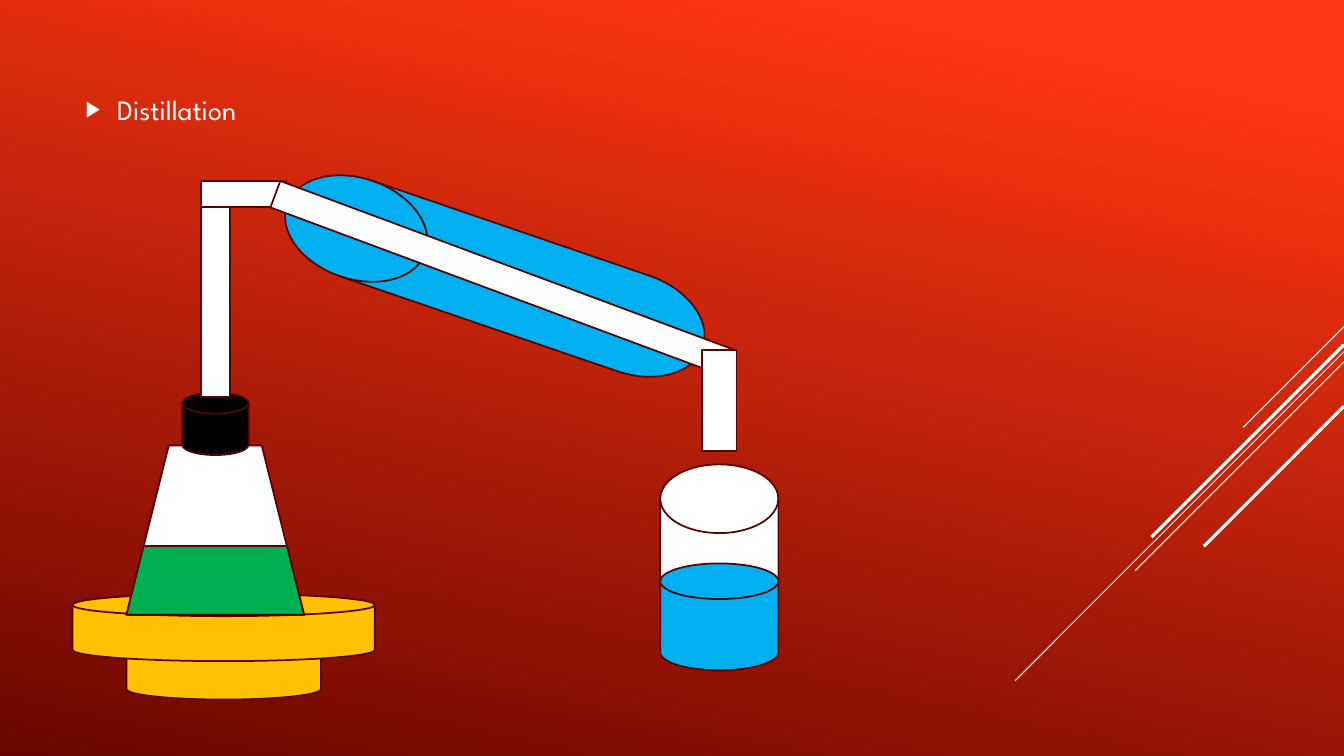
from lxml.etree import SubElement
from pptx import Presentation
from pptx.dml.color import RGBColor
from pptx.enum.shapes import MSO_CONNECTOR, MSO_SHAPE as SHAPE
from pptx.enum.text import MSO_ANCHOR, MSO_AUTO_SIZE
from pptx.oxml.ns import qn
from pptx.util import Pt

WIDTH, HEIGHT = 960, 540
OUTLINE, WHITE, BLACK = "570402", "FFFFFF", "000000"
WATER, LIQUID, BRASS = "00B0F0", "00B050", "FFC000"
DISK, DRUM = SHAPE.FLOWCHART_MAGNETIC_DISK, SHAPE.FLOWCHART_DIRECT_ACCESS_STORAGE

STREAKS = [
    (233.3, 72, 0.75),
    (251.3, 234.7, 0.75),
    (258.5, 149.2, 0.75),
    (246.2, 137.5, 2.25),
    (290.2, 100.1, 2.25),
]

APPARATUS = {
    "condenser": (DISK, (317.5, 40.2, 72, 313.9), WATER, 288.9),
    "burner base": (DISK, (90.3, 454.7, 139, 45), BRASS, 0),
    "burner plate": (DISK, (51.8, 424.1, 216, 48.2), BRASS, 0),
    "flask": (SHAPE.TRAPEZOID, (90.3, 318.2, 126.9, 121), WHITE, 0),
    "flask liquid": (SHAPE.TRAPEZOID, (90.3, 390, 126.9, 49.2), LIQUID, 0),
    "stopper": (DRUM, (131.6, 279, 44.6, 47.5), BLACK, 270),
    "riser": (SHAPE.RECTANGLE, (143.6, 132.5, 20.8, 151.2), WHITE, 0),
    "elbow": (SHAPE.RECTANGLE, (143.6, 129.4, 61, 18.4), WHITE, 0),
    "inner tube": (SHAPE.RECTANGLE, (185.8, 189.1, 347, 20.2), WHITE, 20.4),
    "spout": (SHAPE.RECTANGLE, (477.8, 273.8, 72, 24.5), WHITE, 90),
    "beaker": (DISK, (471.6, 331.7, 84.4, 147.3), WHITE, 0),
    "distillate": (DISK, (471.6, 402.5, 84.4, 76.3), WATER, 0),
}


def color(value):
    """Return the colour for a hex string."""
    return RGBColor.from_string(value)


def set_format(target, values):
    """Set every attribute named in a dict."""
    for name, value in values.items():
        setattr(target, name, value)


def paint_background(slide):
    """Fill the background with the red gradient."""
    fill = slide.background.fill
    fill.gradient()
    fill.gradient_angle = 258
    for stop, (position, value) in zip(fill.gradient_stops, [(0.1, "FF3712"), (1, "6A0600")]):
        stop.position = position
        stop.color.rgb = color(value)


def add_streak(slide, top, length, weight):
    """Draw a diagonal line down and left from the right edge."""
    streak = slide.shapes.add_connector(
        MSO_CONNECTOR.STRAIGHT, Pt(WIDTH), Pt(top), Pt(WIDTH - length), Pt(top + length))
    streak.line.color.rgb = color(WHITE)
    streak.line.width = Pt(weight)
    SubElement(streak._element.spPr, qn("a:effectLst"))


def add_part(slide, kind, box, fill, rotation):
    """Draw one outlined part of the apparatus."""
    shape = slide.shapes.add_shape(kind, *map(Pt, box))
    shape.rotation = rotation
    shape.shadow.inherit = False
    shape.fill.solid()
    shape.fill.fore_color.rgb = color(fill)
    shape.line.color.rgb = color(OUTLINE)
    shape.line.width = Pt(1.25)


def add_bullet(paragraph):
    """Give a paragraph a white triangle bullet with a hanging indent."""
    properties = paragraph._p.get_or_add_pPr()
    properties.set("marL", str(Pt(22.5)))
    properties.set("indent", str(-Pt(22.5)))
    bullet_color = SubElement(properties, qn("a:buClr"))
    SubElement(bullet_color, qn("a:srgbClr"), val=WHITE)
    SubElement(properties, qn("a:buSzPct"), val="80000")
    SubElement(properties, qn("a:buChar"), char="▶")


def fill_body(body, text):
    """Place the body placeholder and write its bulleted line."""
    set_format(body, {"left": Pt(54), "top": Pt(54), "width": Pt(169.2), "height": Pt(47.5)})
    frame = body.text_frame
    set_format(frame, {"vertical_anchor": MSO_ANCHOR.MIDDLE, "word_wrap": True,
                       "auto_size": MSO_AUTO_SIZE.NONE})
    paragraph = frame.paragraphs[0]
    add_bullet(paragraph)
    set_format(paragraph, {"space_before": Pt(0), "space_after": Pt(6)})
    run = paragraph.add_run()
    run.text = text
    set_format(run.font, {"name": "League Spartan", "size": Pt(20)})
    run.font.color.rgb = color(WHITE)


def main():
    """Build the distillation slide and save it."""
    presentation = Presentation()
    set_format(presentation, {"slide_width": Pt(WIDTH), "slide_height": Pt(HEIGHT)})
    slide = presentation.slides.add_slide(presentation.slide_layouts[1])
    title = slide.shapes.title._element
    title.getparent().remove(title)
    paint_background(slide)
    fill_body(slide.placeholders[1], "Distillation")
    for streak in STREAKS:
        add_streak(slide, *streak)
    for part in APPARATUS.values():
        add_part(slide, *part)
    presentation.save("out.pptx")


if __name__ == "__main__":
    main()
